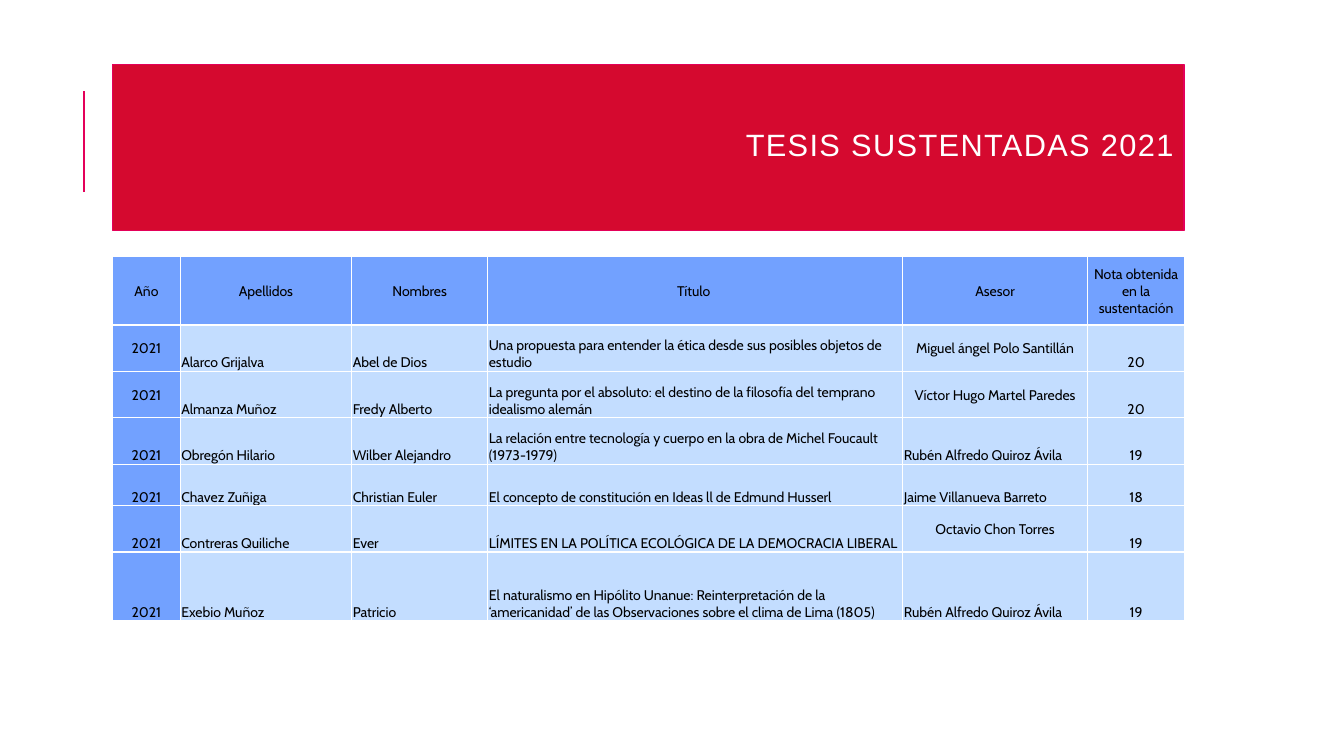
from dataclasses import dataclass

import pptx
import pptx.dml.color
import pptx.enum.shapes
import pptx.enum.text
import pptx.oxml
import pptx.oxml.ns
import pptx.util

Cm = pptx.util.Cm
Pt = pptx.util.Pt
RGBColor = pptx.dml.color.RGBColor
Align = pptx.enum.text.PP_ALIGN
Anchor = pptx.enum.text.MSO_ANCHOR

WHITE = RGBColor(0xFF, 0xFF, 0xFF)
BLACK = RGBColor(0x00, 0x00, 0x00)
RED = RGBColor(0xD5, 0x09, 0x2F)
MAGENTA = RGBColor(0xE4, 0x00, 0x59)
BLUE = RGBColor(0x72, 0xA1, 0xFF)
PALE_BLUE = RGBColor(0xC3, 0xDD, 0xFF)

LEFT, WIDTH = 2.84, 27.0


@dataclass
class Column:
    heading: str
    width: float
    align: Align


@dataclass
class Thesis:
    surname: str
    names: str
    title: str
    advisor: str
    grade: str
    height: float = 1.17
    year_anchor: Anchor = Anchor.BOTTOM
    advisor_anchor: Anchor = Anchor.BOTTOM
    year: str = "2021"


COLUMNS = [
    Column("Año", 1.7, Align.CENTER),
    Column("Apellidos", 4.32, Align.LEFT),
    Column("Nombres", 3.43, Align.LEFT),
    Column("Título ", 10.46, Align.LEFT),
    Column("Asesor", 4.65, Align.LEFT),
    Column("Nota obtenida en la sustentación", 2.46, Align.CENTER),
]
HEADING_HEIGHT = 1.73

THESES = [
    Thesis("Alarco Grijalva", "Abel de Dios",
           "Una propuesta para entender la ética desde sus posibles objetos de estudio",
           "Miguel ángel Polo Santillán", "20",
           year_anchor=Anchor.MIDDLE, advisor_anchor=Anchor.MIDDLE),
    Thesis("Almanza Muñoz", "Fredy Alberto",
           "La pregunta por el absoluto: el destino de la filosofía del temprano idealismo alemán",
           "Víctor Hugo Martel Paredes", "20",
           year_anchor=Anchor.MIDDLE, advisor_anchor=Anchor.MIDDLE),
    Thesis("Obregón Hilario", "Wilber Alejandro",
           "La relación entre tecnología y cuerpo en la obra de Michel Foucault (1973-1979)",
           "Rubén Alfredo Quiroz Ávila", "19"),
    Thesis("Chavez Zuñiga", "Christian Euler",
           "El concepto de constitución en Ideas ll de Edmund Husserl",
           "Jaime Villanueva Barreto", "18", height=1.04),
    Thesis("Contreras Quiliche", "Ever",
           "LÍMITES EN LA POLÍTICA ECOLÓGICA DE LA DEMOCRACIA LIBERAL",
           "Octavio Chon Torres", "19", advisor_anchor=Anchor.MIDDLE),
    Thesis("Exebio Muñoz", "Patricio",
           "El naturalismo en Hipólito Unanue: Reinterpretación de la ‘americanidad’ "
           "de las Observaciones sobre el clima de Lima (1805)",
           "Rubén Alfredo Quiroz Ávila", "19", height=1.73),
]


def format_run(r, font: str, size: float, color: RGBColor) -> None:
    r.font.name = font
    r.font.size = Pt(size)
    r.font.color.rgb = color


def add_borders(cell) -> None:
    tc_pr = cell._tc.get_or_add_tcPr()
    for i, side in enumerate(("lnL", "lnR", "lnT", "lnB")):
        tc_pr.insert(i, pptx.oxml.parse_xml(
            f'<a:{side} {pptx.oxml.ns.nsdecls("a")} w="{Pt(1)}"><a:solidFill>'
            f'<a:srgbClr val="{WHITE}"/></a:solidFill></a:{side}>'))


def fill_cell(cell, text: str, fill: RGBColor, align: Align, anchor: Anchor) -> None:
    cell.margin_left = cell.margin_right = cell.margin_top = Cm(0.03)
    cell.margin_bottom = Cm(0)
    cell.vertical_anchor = anchor
    cell.fill.solid()
    cell.fill.fore_color.rgb = fill
    add_borders(cell)
    p = cell.text_frame.paragraphs[0]
    p.text = text
    p.alignment = align
    format_run(p.runs[0], "Cabin", 10, BLACK)


def add_accent_line(s) -> None:
    line = s.shapes.add_connector(pptx.enum.shapes.MSO_CONNECTOR.STRAIGHT,
                                  Cm(2.12), Cm(4.84), Cm(2.12), Cm(2.3))
    line.line.color.rgb = MAGENTA
    line.line.width = Pt(1.5)
    line._element.spPr.append(pptx.oxml.parse_xml(
        f'<a:effectLst {pptx.oxml.ns.nsdecls("a")}/>'))


def add_title(s, text: str) -> None:
    sp = s.shapes.add_shape(pptx.enum.shapes.MSO_SHAPE.RECTANGLE,
                            Cm(LEFT), Cm(1.63), Cm(WIDTH), Cm(4.17))
    sp.shadow.inherit = False
    sp.fill.solid()
    sp.fill.fore_color.rgb = RED
    sp.line.color.rgb = MAGENTA
    sp.line.width = Pt(0.75)
    tf = sp.text_frame
    tf.word_wrap = True
    tf.vertical_anchor = Anchor.MIDDLE
    p = tf.paragraphs[0]
    p.text = text
    p.alignment = Align.RIGHT
    p.line_spacing = 0.8
    r = p.runs[0]
    format_run(r, "Arial", 22, WHITE)
    r.font._element.set("spc", "100")  # letter spacing of 1 pt


def add_theses_table(s) -> None:
    heights = [HEADING_HEIGHT] + [t.height for t in THESES]
    table = s.shapes.add_table(len(heights), len(COLUMNS), Cm(LEFT), Cm(6.46),
                               Cm(WIDTH), Cm(sum(heights))).table
    for row, height in zip(table.rows, heights):
        row.height = Cm(height)

    # Heading row
    for i, col in enumerate(COLUMNS):
        table.columns[i].width = Cm(col.width)
        fill_cell(table.cell(0, i), col.heading, BLUE, Align.CENTER, Anchor.MIDDLE)

    # One row per thesis; vertically centred cells are also centred across
    for n, t in enumerate(THESES, start=1):
        texts = [t.year, t.surname, t.names, t.title, t.advisor, t.grade]
        anchors = [t.year_anchor, *[Anchor.BOTTOM] * 3, t.advisor_anchor, Anchor.BOTTOM]
        for i, (col, text, anchor) in enumerate(zip(COLUMNS, texts, anchors)):
            align = Align.CENTER if anchor == Anchor.MIDDLE else col.align
            fill_cell(table.cell(n, i), text, PALE_BLUE if i else BLUE, align, anchor)


def main() -> None:
    prs = pptx.Presentation()
    prs.slide_width, prs.slide_height = Cm(33.87), Cm(19.05)
    s = prs.slides.add_slide(prs.slide_layouts[6])
    add_accent_line(s)
    add_title(s, "TESIS SUSTENTADAS 2021")
    add_theses_table(s)
    prs.save("out.pptx")


if __name__ == "__main__":
    main()
